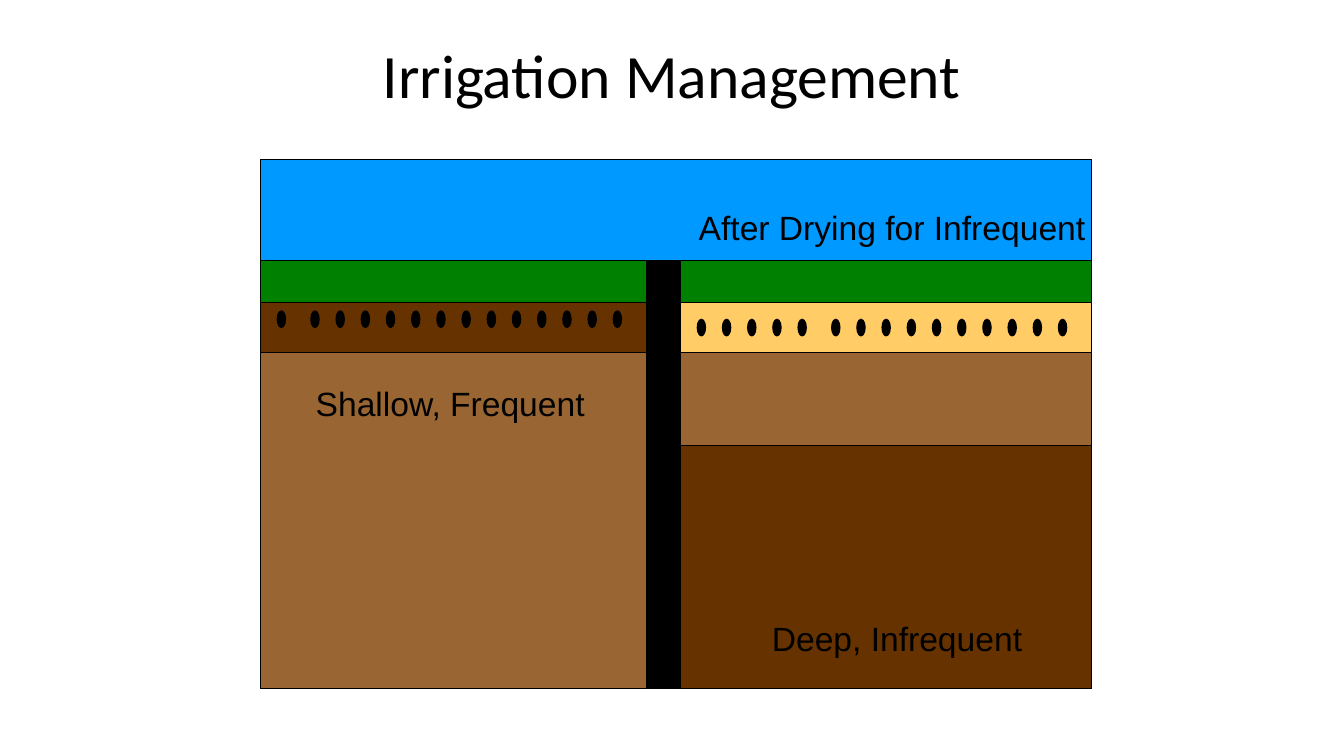
from pptx import Presentation
from pptx.dml.color import RGBColor
from pptx.enum.shapes import MSO_SHAPE as Shape
from pptx.enum.text import MSO_ANCHOR as Anchor, MSO_AUTO_SIZE as AutoSize, PP_ALIGN as Align
from pptx.util import Inches, Pt

COLUMNS, ROWS = 160, 90
BLACK, SKY, GRASS = "000000", "0099FF", "008000"
WET_SOIL, SOIL, DRY_SOIL = "663300", "996633", "FFCC66"


def color(hex_string):
    return RGBColor.from_string(hex_string)


class SoilSlide:
    """Draws on one slide, with places given in columns and rows of its grid."""

    def __init__(self, deck):
        self.slide = deck.slides.add_slide(deck.slide_layouts[5])
        self.column = deck.slide_width / COLUMNS
        self.row = deck.slide_height / ROWS

    def place(self, left, top, width, height):
        return (round(left * self.column), round(top * self.row),
                round(width * self.column), round(height * self.row))

    def add_words(self, frame, words, font, size):
        paragraph = frame.paragraphs[0]
        run = paragraph.add_run()
        run.text = words
        run.font.name = font
        run.font.size = Pt(size)
        run.font.color.rgb = color(BLACK)
        return paragraph

    def title(self, words, *box):
        heading = self.slide.shapes.title
        heading.left, heading.top, heading.width, heading.height = self.place(*box)
        frame = heading.text_frame
        frame.vertical_anchor = Anchor.TOP
        frame.auto_size = AutoSize.NONE
        paragraph = self.add_words(frame, words, "Calibri", 44)
        paragraph.alignment = Align.CENTER
        paragraph.line_spacing = 0.9

    def block(self, fill, *box, outline=Shape.RECTANGLE):
        block = self.slide.shapes.add_shape(outline, *self.place(*box))
        block.shadow.inherit = False
        block.fill.solid()
        block.fill.fore_color.rgb = color(fill)
        block.line.color.rgb = color(BLACK)
        block.line.width = Pt(0.75)

    def roots(self, columns, row):
        for column in columns:
            self.block(BLACK, column, row, 1, 2, outline=Shape.OVAL)

    def label(self, words, *box):
        frame = self.slide.shapes.add_textbox(*self.place(*box)).text_frame
        frame.word_wrap = False
        frame.auto_size = AutoSize.SHAPE_TO_FIT_TEXT
        self.add_words(frame, words, "Arial", 24)


def main():
    deck = Presentation()
    deck.slide_width, deck.slide_height = Inches(13.33), Inches(7.5)
    soil = SoilSlide(deck)
    soil.title("Irrigation Management", 11, 4.8, 138, 17.4)

    frequent, infrequent = (31, 46), (81, 49)
    soil.block(SKY, 31, 19, 99, 12)
    for left, width in (frequent, infrequent):
        soil.block(GRASS, left, 31, width, 5)
    soil.block(BLACK, 77, 31, 4, 51)

    layers = [
        (frequent, SOIL, 41, 41),
        (infrequent, WET_SOIL, 36, 46),
        (frequent, WET_SOIL, 36, 6),
        (infrequent, SOIL, 36, 17),
        (infrequent, DRY_SOIL, 36, 6),
    ]
    for (left, width), fill, top, height in layers:
        soil.block(fill, left, top, width, height)

    soil.label("Shallow, Frequent", 36.4, 45, 34.7, 6)
    soil.label("Deep, Infrequent", 90.7, 73, 32.3, 6)
    soil.label("After Drying for Infrequent", 82, 24, 48.5, 6)

    soil.roots([33, *range(37, 74, 3)], 37)
    soil.roots([*range(83, 96, 3), *range(99, 127, 3)], 38)
    deck.save("out.pptx")


if __name__ == "__main__":
    main()
